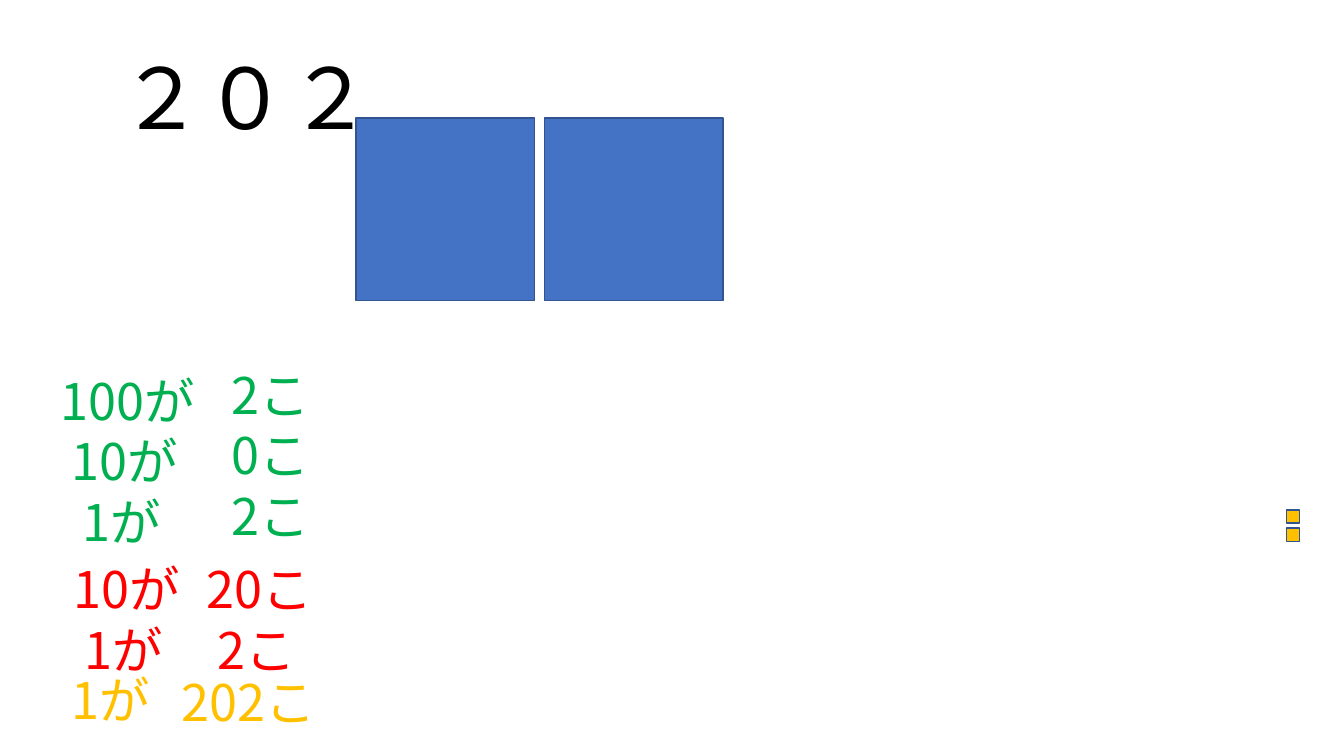
from pptx import Presentation
from pptx.dml import color
from pptx.enum import shapes, text
from pptx.oxml import ns
from pptx.util import Inches, Pt

FONT = "Noto Sans CJK JP"
GREEN, RED, YELLOW, BLUE = "00B050", "FF0000", "FFC000", "4472C4"
STEP = 0.11


def rgb(value):
    return color.RGBColor.from_string(value)


def place(item, left, top, width, height):
    item.left, item.top = Inches(left), Inches(top)
    item.width, item.height = Inches(width), Inches(height)


def write_lines(frame, lines, size, ink):
    frame.word_wrap = True
    frame.auto_size = text.MSO_AUTO_SIZE.SHAPE_TO_FIT_TEXT
    frame.vertical_anchor = text.MSO_ANCHOR.TOP
    for index, (words, indent) in enumerate(lines):
        line = frame.add_paragraph() if index else frame.paragraphs[0]
        line.text = words
        line.alignment = text.PP_ALIGN.LEFT
        properties = line._p.get_or_add_pPr()
        properties.set("marL", str(Inches(indent)))
        properties.set("indent", "0")
        for run in line.runs:
            run.font.size = Pt(size)
            run.font.name = FONT
            run.font.color.rgb = rgb(ink)
            run_properties = run._r.get_or_add_rPr()
            east_asian = run_properties.makeelement(ns.qn("a:ea"), {"typeface": FONT})
            run_properties.find(ns.qn("a:latin")).addnext(east_asian)


def add_number(slide, digits):
    number = slide.shapes.title
    place(number, 0.26, 0.4, 3.54, 1.11)
    write_lines(number.text_frame, [(digits, 0.83)], 60, "000000")


def add_counts(slide, left, top, height, lines, ink):
    counts = slide.shapes.add_textbox(Inches(left), Inches(top), Inches(2), Inches(height))
    write_lines(counts.text_frame, [(words, steps * STEP) for words, steps in lines], 36, ink)


def add_block(slide, left, top, width, height, fill):
    block = slide.shapes.add_shape(shapes.MSO_SHAPE.RECTANGLE, 0, 0, 0, 0)
    place(block, left, top, width, height)
    block.shadow.inherit = False
    block.fill.solid()
    block.fill.fore_color.rgb = rgb(fill)
    block.line.color.rgb = rgb("325491")
    block.line.width = Pt(1)


def main():
    deck = Presentation()
    deck.slide_width, deck.slide_height = Inches(13.33), Inches(7.5)
    slide = deck.slides.add_slide(deck.slide_layouts[5])

    add_number(slide, "２０２")
    for index in range(2):
        add_block(slide, 3.53 + index * 1.87, 1.17, 1.77, 1.81, BLUE)
    for index in range(2):
        add_block(slide, 12.76, 5.06 + index * 0.18, 0.13, 0.13, YELLOW)

    add_counts(slide, 2.09, 3.56, 1.92, [("2こ", 1), ("0こ", 1), ("2こ", 1)], GREEN)
    add_counts(slide, 0.39, 3.62, 1.92, [("100が", 1), ("10が", 2), ("1が", 3)], GREEN)
    add_counts(slide, 0.41, 5.49, 1.31, [("10が", 2), ("1が", 3)], RED)
    add_counts(slide, 1.84, 5.49, 1.31, [("20こ", 1), ("2こ", 2)], RED)
    add_counts(slide, 0.39, 6.59, 0.71, [("1が", 2)], YELLOW)
    add_counts(slide, 1.59, 6.61, 0.71, [("202こ", 1)], YELLOW)

    deck.save("out.pptx")


if __name__ == "__main__":
    main()
